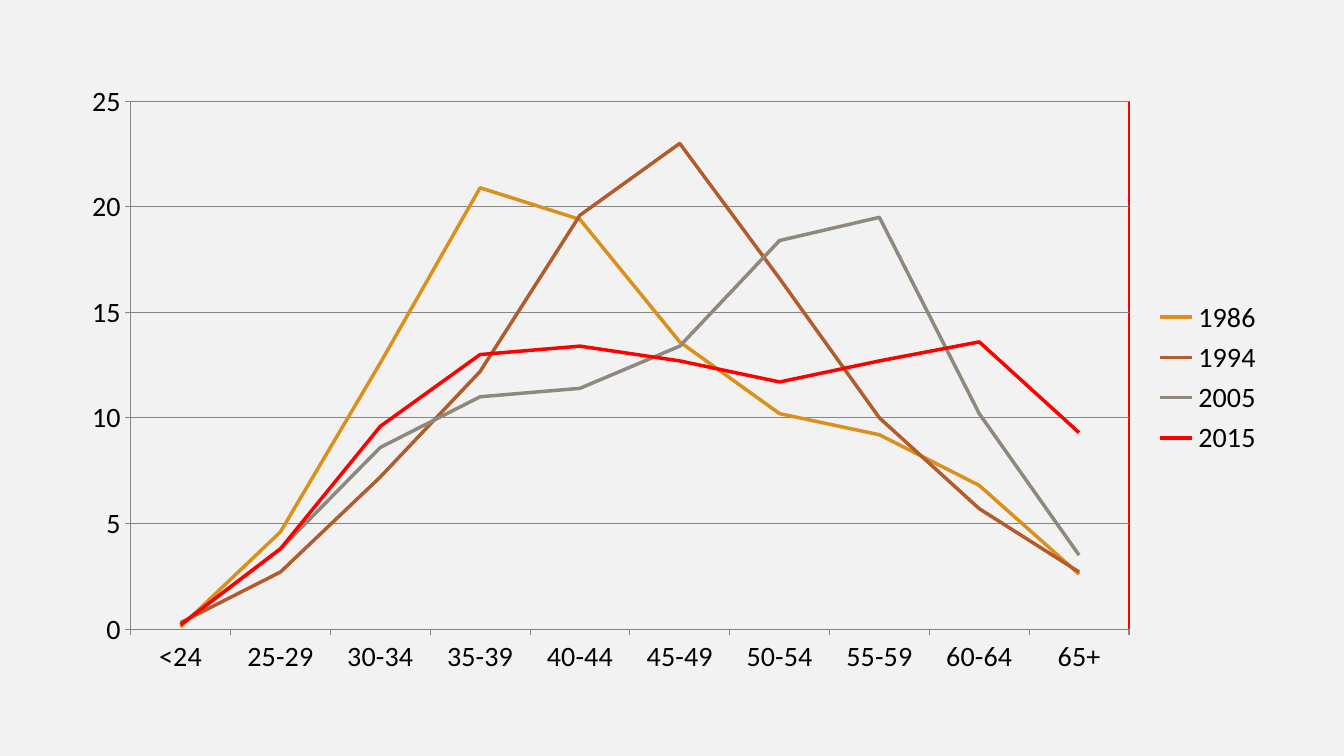
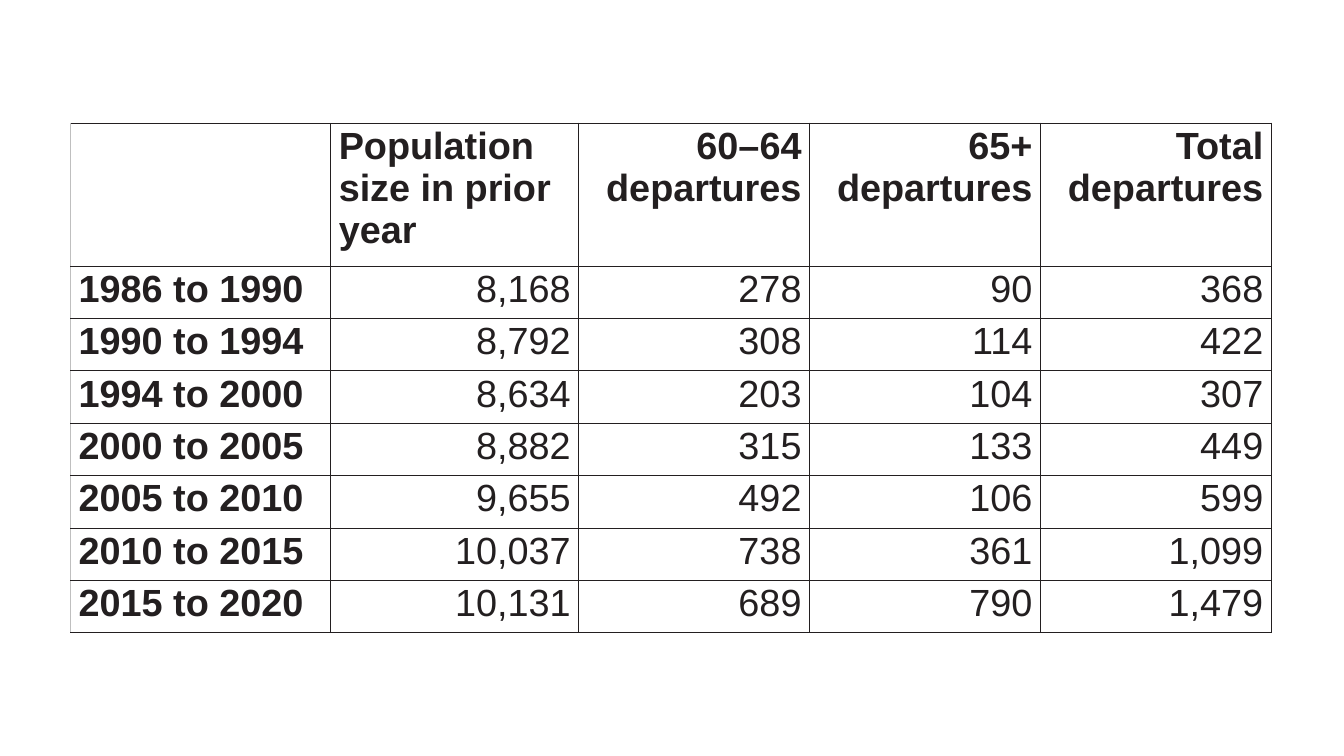
from typing import NamedTuple

from lxml import etree
from pptx import Presentation
from pptx.chart.axis import _BaseAxis
from pptx.chart.chart import Chart
from pptx.chart.data import CategoryChartData
from pptx.dml.color import RGBColor
from pptx.enum.chart import XL_CHART_TYPE, XL_LEGEND_POSITION, XL_MARKER_STYLE
from pptx.enum.text import PP_ALIGN
from pptx.oxml.ns import qn
from pptx.slide import Slide
from pptx.table import _Cell
from pptx.util import Inches, Pt

LINE = XL_CHART_TYPE.LINE
LEGEND_RIGHT = XL_LEGEND_POSITION.RIGHT
NO_MARKER = XL_MARKER_STYLE.NONE
LEFT, RIGHT = PP_ALIGN.LEFT, PP_ALIGN.RIGHT

WHITE = RGBColor(0xFF, 0xFF, 0xFF)
PALE = RGBColor(0xF2, 0xF2, 0xF2)
BLACK = RGBColor(0x00, 0x00, 0x00)
INK = RGBColor(0x23, 0x1F, 0x20)
SILVER = RGBColor(0xBF, 0xBF, 0xBF)
GREY = RGBColor(0x86, 0x86, 0x86)
GOLD = RGBColor(0xDA, 0x90, 0x1A)
RUST = RGBColor(0xB3, 0x5B, 0x2B)
STONE = RGBColor(0x8F, 0x88, 0x7C)
RED = RGBColor(0xFF, 0x00, 0x00)

SIDE, WIDTH = Inches(0.7), Inches(11.93)


class Series(NamedTuple):
    name: str
    color: RGBColor
    values: tuple[float, ...]


class Edge(NamedTuple):
    color: RGBColor
    points: float


AGES = ("<24", "25-29", "30-34", "35-39", "40-44",
        "45-49", "50-54", "55-59", "60-64", "65+")
SERIES = (
    Series("1986", GOLD, (0.1, 4.6, 12.6, 20.9, 19.4, 13.6, 10.2, 9.2, 6.8, 2.6)),
    Series("1994", RUST, (0.3, 2.7, 7.2, 12.2, 19.6, 23, 16.6, 10, 5.7, 2.7)),
    Series("2005", STONE, (0.2, 3.8, 8.6, 11, 11.4, 13.4, 18.4, 19.5, 10.2, 3.5)),
    Series("2015", RED, (0.2, 3.8, 9.6, 13, 13.4, 12.7, 11.7, 12.7, 13.6, 9.3)),
)
PLOT = {"x": 0.05, "y": 0.05, "w": 0.83, "h": 0.86}

ROWS = (
    ("", "Population size in prior year", "60–64 departures",
     "65+ departures", "Total departures"),
    ("1986 to 1990", "8,168", "278", "90", "368"),
    ("1990 to 1994", "8,792", "308", "114", "422"),
    ("1994 to 2000", "8,634", "203", "104", "307"),
    ("2000 to 2005", "8,882", "315", "133", "449"),
    ("2005 to 2010", "9,655", "492", "106", "599"),
    ("2010 to 2015", "10,037", "738", "361", "1,099"),
    ("2015 to 2020", "10,131", "689", "790", "1,479"),
)
COLS = (2.58, 2.46, 2.29, 2.29, 2.29)
HEAD, ROW = 1.42, 0.52
RULE, FAINT, HAIR = Edge(INK, 0.75), Edge(SILVER, 0.6), Edge(INK, 0.3)


def add_line(parent: etree._Element, tag: str, edge: Edge) -> None:
    line = etree.SubElement(parent, qn(tag), w=str(Pt(edge.points)))
    fill = etree.SubElement(line, qn("a:solidFill"))
    etree.SubElement(fill, qn("a:srgbClr"), val=str(edge.color))


def frame_plot(chart: Chart) -> None:
    """Fix the inner plot area and give it a thin red border."""
    plot = chart.element.find(".//" + qn("c:plotArea"))
    for old in plot.findall(qn("c:layout")):
        plot.remove(old)
    layout = etree.Element(qn("c:layout"))
    plot.insert(0, layout)
    manual = etree.SubElement(layout, qn("c:manualLayout"))
    etree.SubElement(manual, qn("c:layoutTarget"), val="inner")
    for side in "xy":
        etree.SubElement(manual, qn(f"c:{side}Mode"), val="edge")
    for key, share in PLOT.items():
        etree.SubElement(manual, qn(f"c:{key}"), val=str(share))
    add_line(etree.SubElement(plot, qn("c:spPr")), "a:ln", Edge(RED, 0.75))


def style_axis(axis: _BaseAxis, grid: bool) -> None:
    axis.tick_labels.font.size = Pt(20)
    axis.has_major_gridlines = grid
    lines = [axis.format.line]
    if grid:
        lines.append(axis.major_gridlines.format.line)
    for line in lines:
        line.color.rgb = GREY
        line.width = Pt(0.75)


def draw_chart(slide: Slide) -> None:
    data = CategoryChartData()
    data.categories = AGES
    for item in SERIES:
        data.add_series(item.name, item.values)
    chart = slide.shapes.add_chart(
        LINE, SIDE, Inches(0.7), WIDTH, Inches(6.09), data).chart
    chart.has_title = False
    chart.font.name = "Calibri"
    chart.font.size = Pt(10)
    chart.font.color.rgb = BLACK
    chart.has_legend = True
    chart.legend.position = LEGEND_RIGHT
    chart.legend.include_in_layout = False
    chart.legend.font.size = Pt(20)

    style_axis(chart.category_axis, grid=False)
    style_axis(chart.value_axis, grid=True)
    chart.value_axis.minimum_scale = 0
    chart.value_axis.maximum_scale = 25
    chart.value_axis.major_unit = 5

    plot = chart.plots[0]
    plot.vary_by_categories = False
    for item, line in zip(SERIES, plot.series):
        line.smooth = False
        line.marker.style = NO_MARKER
        line.format.line.color.rgb = item.color
        line.format.line.width = Pt(2.5)
    frame_plot(chart)


def fill_cell(cell: _Cell, text: str, row: int, col: int) -> None:
    cell.margin_left = cell.margin_right = Inches(0.08)
    cell.margin_top, cell.margin_bottom = Inches(0.02), 0
    edges = {
        "L": RULE if col else FAINT,
        "R": RULE,
        "T": RULE if row or col else HAIR,
        "B": RULE,
    }
    props = cell._tc.get_or_add_tcPr()
    for side, edge in edges.items():
        add_line(props, f"a:ln{side}", edge)
    cell.fill.background()

    cell.text = text
    para = cell.text_frame.paragraphs[0]
    para.alignment = RIGHT if col > 1 or (row and col) else LEFT
    para.font.name = "Arial"
    para.font.size = Pt(27)
    para.font.bold = row == 0 or col == 0
    para.font.color.rgb = INK


def draw_table(slide: Slide) -> None:
    heights = [HEAD] + [ROW] * (len(ROWS) - 1)
    table = slide.shapes.add_table(
        len(ROWS), len(COLS), SIDE, Inches(1.22), WIDTH,
        Inches(sum(heights))).table
    table.first_row = table.horz_banding = False
    for column, width in zip(table.columns, COLS):
        column.width = Inches(width)
    for row, (texts, height) in enumerate(zip(ROWS, heights)):
        table.rows[row].height = Inches(height)
        for col, text in enumerate(texts):
            fill_cell(table.cell(row, col), text, row, col)


def main() -> None:
    deck = Presentation()
    deck.slide_width, deck.slide_height = Inches(13.33), Inches(7.5)
    for color, draw in ((PALE, draw_chart), (WHITE, draw_table)):
        slide = deck.slides.add_slide(deck.slide_layouts[6])
        slide.background.fill.solid()
        slide.background.fill.fore_color.rgb = color
        draw(slide)
    deck.save("out.pptx")


if __name__ == "__main__":
    main()
